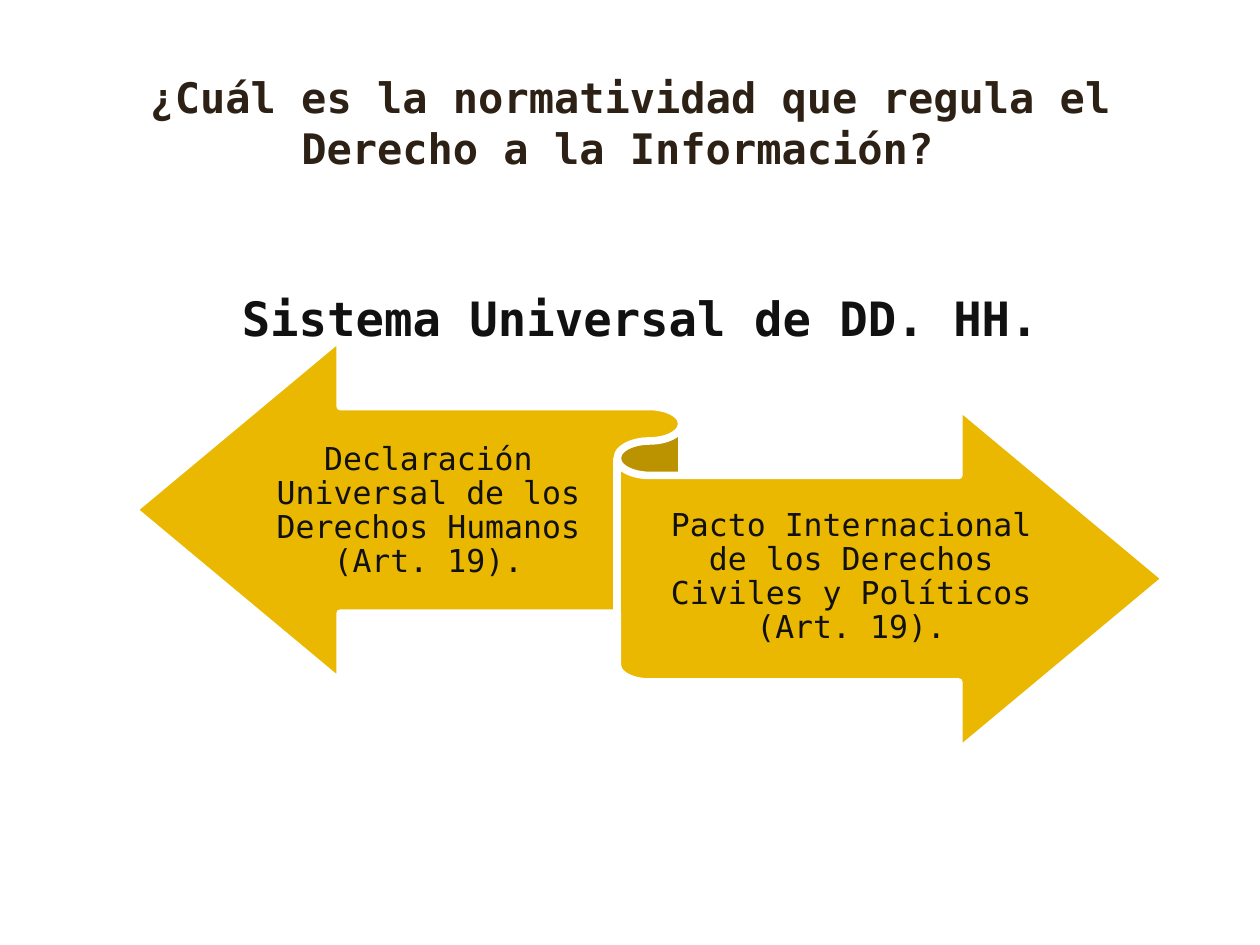
import pptx
import pptx.dml.color
import pptx.enum.shapes
import pptx.enum.text
import pptx.util
from pptx.util import Inches

FONT = "DejaVu Sans Mono"
INK = "111111"
TITLE_BROWN = "2C2114"
GOLD = "EAB800"
WHITE = "FFFFFF"


def color(hex_value):
    return pptx.dml.color.RGBColor.from_string(hex_value)


def add_text(page, area, text, size, ink, bold=False, margins=(0.1, 0.05),
             anchor=pptx.enum.text.MSO_ANCHOR.TOP, line_spacing=None):
    """Add a centred paragraph; margins are (sides, top and bottom) in inches."""
    box = page.shapes.add_textbox(*map(Inches, area))
    frame = box.text_frame
    frame.word_wrap = True
    frame.vertical_anchor = anchor
    frame.margin_left = frame.margin_right = Inches(margins[0])
    frame.margin_top = frame.margin_bottom = Inches(margins[1])
    para = frame.paragraphs[0]
    para.alignment = pptx.enum.text.PP_ALIGN.CENTER
    para.line_spacing = line_spacing
    span = para.add_run()
    span.text = text
    span.font.name = FONT
    span.font.size = pptx.util.Pt(size)
    span.font.bold = bold
    span.font.color.rgb = color(ink)


def add_headings(page, left, top, width):
    add_text(page, (left, top, width, 1.61),
             "¿Cuál es la normatividad que regula el Derecho a la Información? ",
             24, TITLE_BROWN, bold=True)
    add_text(page, (left + 0.08, top + 1.73, width, 4.8),
             "Sistema Universal de DD. HH.", 27, INK, bold=True)


def add_ribbon(page, left, top, width, height):
    ribbon = page.shapes.add_shape(
        pptx.enum.shapes.MSO_SHAPE.LEFT_RIGHT_RIBBON,
        *map(Inches, (left, top, width, height)))
    ribbon.shadow.inherit = False
    ribbon.fill.solid()
    ribbon.fill.fore_color.rgb = color(GOLD)
    ribbon.line.color.rgb = color(WHITE)
    ribbon.line.width = pptx.util.Pt(4.33)

    # Each label: offset from the ribbon's corner, width and wording.
    labels = (
        (0.99, 0.57, 2.7,
         "Declaración Universal de los Derechos Humanos (Art. 19)."),
        (4.1, 1.1, 3.19,
         "Pacto Internacional de los Derechos Civiles y Políticos (Art. 19)."),
    )
    for across, down, label_width, text in labels:
        add_text(page, (left + across, top + down, label_width, 1.61),
                 text, 18, INK, margins=(0, 0.07),
                 anchor=pptx.enum.text.MSO_ANCHOR.MIDDLE, line_spacing=0.9)


def main():
    deck = pptx.Presentation()
    deck.slide_width = Inches(10)
    deck.slide_height = Inches(7.5)
    page = deck.slides.add_slide(deck.slide_layouts[6])
    page.background.fill.solid()
    page.background.fill.fore_color.rgb = color(WHITE)
    # The ribbon goes first so that its white outline stays behind the heading.
    add_ribbon(page, 1.06, 2.68, 8.19, 3.28)
    add_headings(page, 0.75, 0.52, 8.5)
    deck.save("out.pptx")


if __name__ == "__main__":
    main()
